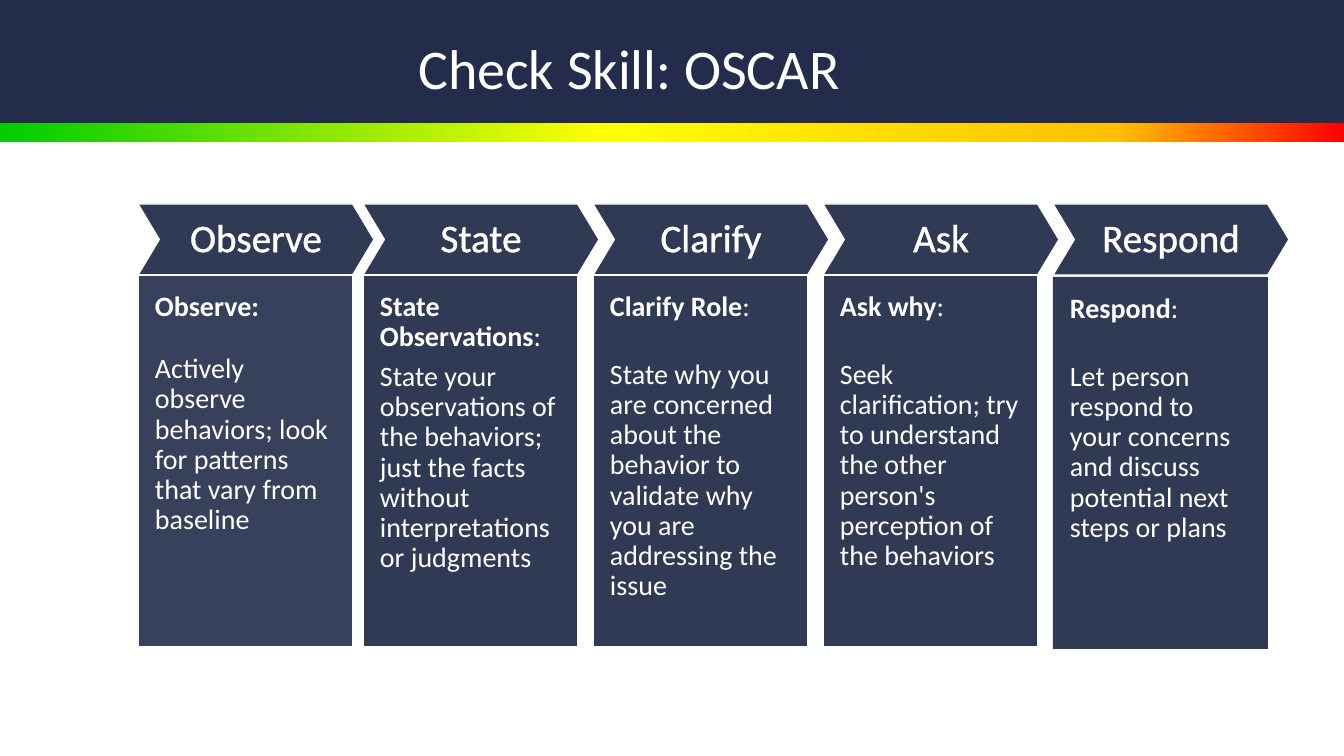
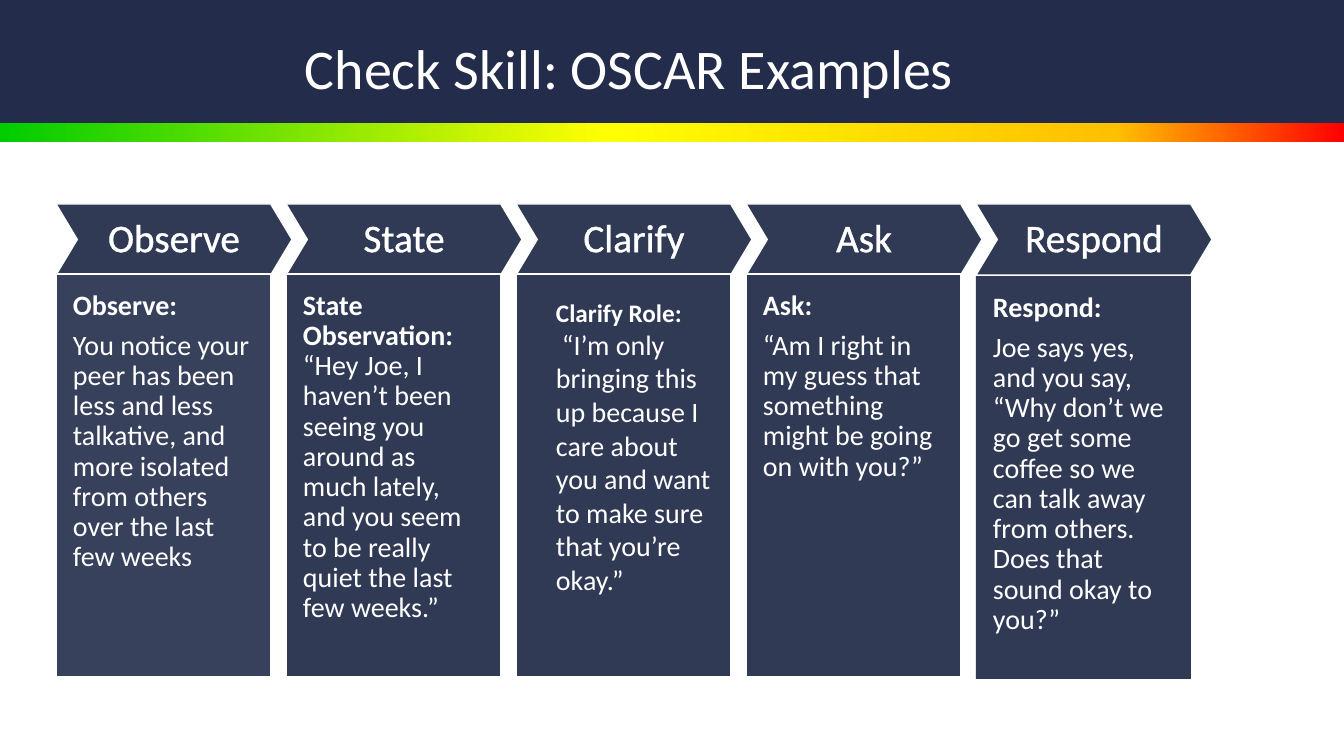
from dataclasses import dataclass

import lxml.etree
import pptx
import pptx.dml.color
import pptx.enum.shapes
import pptx.enum.text
import pptx.oxml.ns
import pptx.util

EMU_PER_PX = 914400 / 100.8
SLIDE_WIDTH, SLIDE_HEIGHT = 1344, 756
BAND_HEIGHT, RAINBOW_HEIGHT = 123, 19
COLUMN_PITCH, COLUMN_WIDTH = 230, 215
HEADER_TOP, HEADER_WIDTH, HEADER_HEIGHT = 204, 236, 71

qn = pptx.oxml.ns.qn
MSO_SHAPE = pptx.enum.shapes.MSO_SHAPE
PP_ALIGN = pptx.enum.text.PP_ALIGN
MSO_ANCHOR = pptx.enum.text.MSO_ANCHOR


@dataclass(frozen=True)
class Theme:
    font: str = "Calibri"
    navy: str = "232D4B"
    slate: str = "313A55"
    white: str = "FFFFFF"
    rainbow: tuple[tuple[int, str], ...] = (
        (0, "00CC00"), (45, "FFFF00"), (83, "FFC000"), (100, "FF0000"))
    title_size: int = 40
    header_size: int = 28
    body_size: int = 20
    small_size: int = 18
    line_spacing: float = 0.9


THEME = Theme()


@dataclass(frozen=True)
class Insets:
    left: int
    top: int
    right: int
    bottom: int


HEADER_INSETS = Insets(9, 9, 9, 9)
BODY_INSETS = Insets(17, 17, 17, 34)


@dataclass(frozen=True)
class Step:
    """One letter of OSCAR; lead is bold, and rest follows it on the same line."""
    name: str
    lead: str
    rest: str = ""
    detail: str = ""
    gap: int = 7
    lead_size: int = THEME.body_size
    line_spacing: float = THEME.line_spacing
    detail_indent: int = 0
    insets: Insets = BODY_INSETS


@dataclass(frozen=True)
class Process:
    title: str
    left: int
    first_shift: int
    body_top: int
    body_height: int
    steps: tuple[Step, ...]


PROCESSES = (
    Process("Check Skill: OSCAR", 133, 5, 275, 372, (
        Step("Observe", "Observe:", gap=23,
             detail="Actively observe behaviors; look for patterns that vary "
                    "from baseline"),
        Step("State", "State Observations", ":",
             "State your observations of the behaviors; just the facts without "
             "interpretations or judgments"),
        Step("Clarify", "Clarify Role", ":",
             "State why you are concerned about the behavior to validate why "
             "you are addressing the issue", gap=27),
        Step("Ask", "Ask why", ":",
             "Seek clarification; try to understand the other person's "
             "perception of the behaviors", gap=27),
        Step("Respond", "Respond", ":",
             "Let person respond to your concerns and discuss potential next "
             "steps or plans", gap=27),
    )),
    Process("Check Skill: OSCAR Examples", 56, 0, 274, 403, (
        Step("Observe", "Observe:",
             detail="You notice your peer has been less and less talkative, "
                    "and more isolated from others over the last few weeks"),
        Step("State", "State Observation:",
             " “Hey Joe, I haven’t been seeing you around as much lately, and "
             "you seem to be really quiet the last few weeks.”"),
        Step("Clarify", "Clarify Role:", gap=0,
             detail="“I’m only bringing this up because I care about you and "
                    "want to make sure that you’re okay.”",
             lead_size=THEME.small_size, line_spacing=1.0, detail_indent=6,
             insets=Insets(40, 23, 17, 5)),
        Step("Ask", "Ask:",
             detail="“Am I right in my guess that something might be going on "
                    "with you?”"),
        Step("Respond", "Respond:",
             detail="Joe says yes, and you say, “Why don’t we go get some "
                    "coffee so we can talk away from others. Does that sound "
                    "okay to you?”"),
    )),
)


def px(length: int) -> pptx.util.Emu:
    return pptx.util.Emu(round(length * EMU_PER_PX))


def rgb(color: str) -> pptx.dml.color.RGBColor:
    return pptx.dml.color.RGBColor.from_string(color)


def add_block(slide, preset, left: int, top: int, width: int, height: int,
              color: str, outlined: bool = False):
    block = slide.shapes.add_shape(preset, px(left), px(top), px(width), px(height))
    block.shadow.inherit = False
    block.fill.solid()
    block.fill.fore_color.rgb = rgb(color)
    if outlined:
        block.line.color.rgb = rgb(THEME.white)
        block.line.width = pptx.util.Pt(1)
    else:
        block.line.fill.background()
    return block


def set_frame(frame, insets: Insets, anchor) -> None:
    frame.word_wrap = True
    frame.vertical_anchor = anchor
    frame.margin_left, frame.margin_top = px(insets.left), px(insets.top)
    frame.margin_right, frame.margin_bottom = px(insets.right), px(insets.bottom)


def style_paragraph(paragraph, size: int, align,
                    line_spacing: float = THEME.line_spacing) -> None:
    paragraph.alignment = align
    paragraph.line_spacing = line_spacing
    paragraph.font.name = THEME.font
    paragraph.font.size = pptx.util.Pt(size)
    paragraph.font.color.rgb = rgb(THEME.white)


def add_run(paragraph, text: str, bold: bool) -> None:
    run = paragraph.add_run()
    run.text = text
    run.font.bold = bold


def outline_run(run) -> None:
    """Give the letters a thin white outline."""
    outline = lxml.etree.Element(qn("a:ln"), w=str(pptx.util.Pt(0.75)))
    fill = lxml.etree.SubElement(outline, qn("a:solidFill"))
    lxml.etree.SubElement(fill, qn("a:srgbClr"), val=THEME.white)
    run.font.fill.solid()
    run.font.fill.fore_color.rgb = rgb(THEME.white)
    run.text = run.text
    run.font.bold = False
    properties = run.font.fill.fore_color and run._r.get_or_add_rPr()
    properties.insert(0, outline)


def set_rainbow(block) -> None:
    block.fill.gradient()
    block.fill.gradient_angle = 0
    stops = block.element.spPr.find(".//" + qn("a:gsLst"))
    stops.clear()
    for percent, color in THEME.rainbow:
        stop = lxml.etree.SubElement(stops, qn("a:gs"), pos=str(percent * 1000))
        lxml.etree.SubElement(stop, qn("a:srgbClr"), val=color)


def set_opacity(block, percent: int) -> None:
    color = block.element.spPr.find(qn("a:solidFill")).find(qn("a:srgbClr"))
    lxml.etree.SubElement(color, qn("a:alpha"), val=str(percent * 1000))


def build_layout(layout, slide) -> None:
    """Place the title and move the two bands, drawn on slide, to the layout."""
    title = layout.placeholders[0]
    title.left, title.top, title.width, title.height = map(px, (93, -2, 1072, 146))
    rainbow = add_block(slide, MSO_SHAPE.RECTANGLE, 0, BAND_HEIGHT, SLIDE_WIDTH,
                        RAINBOW_HEIGHT, THEME.white)
    set_rainbow(rainbow)
    band = add_block(slide, MSO_SHAPE.RECTANGLE, 0, 0, SLIDE_WIDTH, BAND_HEIGHT,
                     THEME.navy)
    for number, block in enumerate((rainbow, band)):
        block.element.nvSpPr.cNvPr.set("id", str(100 + number))
        layout.shapes.element.insert(2 + number, block.element)


def add_title(slide, text: str) -> None:
    frame = slide.shapes.title.text_frame
    frame.text = text
    frame.vertical_anchor = MSO_ANCHOR.MIDDLE
    style_paragraph(frame.paragraphs[0], THEME.title_size, PP_ALIGN.CENTER)


def add_header(slide, left: int, name: str) -> None:
    chevron = add_block(slide, MSO_SHAPE.CHEVRON, left, HEADER_TOP, HEADER_WIDTH,
                        HEADER_HEIGHT, THEME.slate, outlined=True)
    chevron.adjustments[0] = 0.3
    set_frame(chevron.text_frame, HEADER_INSETS, MSO_ANCHOR.MIDDLE)
    paragraph = chevron.text_frame.paragraphs[0]
    style_paragraph(paragraph, THEME.header_size, PP_ALIGN.CENTER)
    add_run(paragraph, name, bold=False)
    outline_run(paragraph.runs[0])


def write_step(frame, step: Step) -> None:
    set_frame(frame, step.insets, MSO_ANCHOR.TOP)
    heading = frame.paragraphs[0]
    style_paragraph(heading, step.lead_size, PP_ALIGN.LEFT, step.line_spacing)
    add_run(heading, step.lead, bold=True)
    if step.rest:
        add_run(heading, step.rest, bold=False)
    if step.detail:
        heading.space_after = pptx.util.Pt(step.gap)
        detail = frame.add_paragraph()
        style_paragraph(detail, THEME.body_size, PP_ALIGN.LEFT, step.line_spacing)
        add_run(detail, step.detail, bold=False)
        if step.detail_indent:
            detail._p.get_or_add_pPr().set("indent", str(px(step.detail_indent)))


def add_process(slide, process: Process) -> None:
    add_title(slide, process.title)
    last = len(process.steps) - 1
    for index, step in enumerate(process.steps):
        shift = process.first_shift if index == 0 else 0
        left = process.left + index * COLUMN_PITCH + shift
        add_header(slide, left, step.name)
        top = process.body_top + (2 if index == last else 0)
        body = add_block(slide, MSO_SHAPE.RECTANGLE, left, top, COLUMN_WIDTH,
                         process.body_height,
                         THEME.navy if index == 0 else THEME.slate,
                         outlined=index != last)
        if index == 0:
            set_opacity(body, 90)
        write_step(body.text_frame, step)


def main() -> None:
    deck = pptx.Presentation()
    deck.slide_width, deck.slide_height = px(SLIDE_WIDTH), px(SLIDE_HEIGHT)
    layout = deck.slide_layouts[5]
    for number, process in enumerate(PROCESSES):
        slide = deck.slides.add_slide(layout)
        if number == 0:
            build_layout(layout, slide)
        add_process(slide, process)
    deck.save("out.pptx")


if __name__ == "__main__":
    main()
